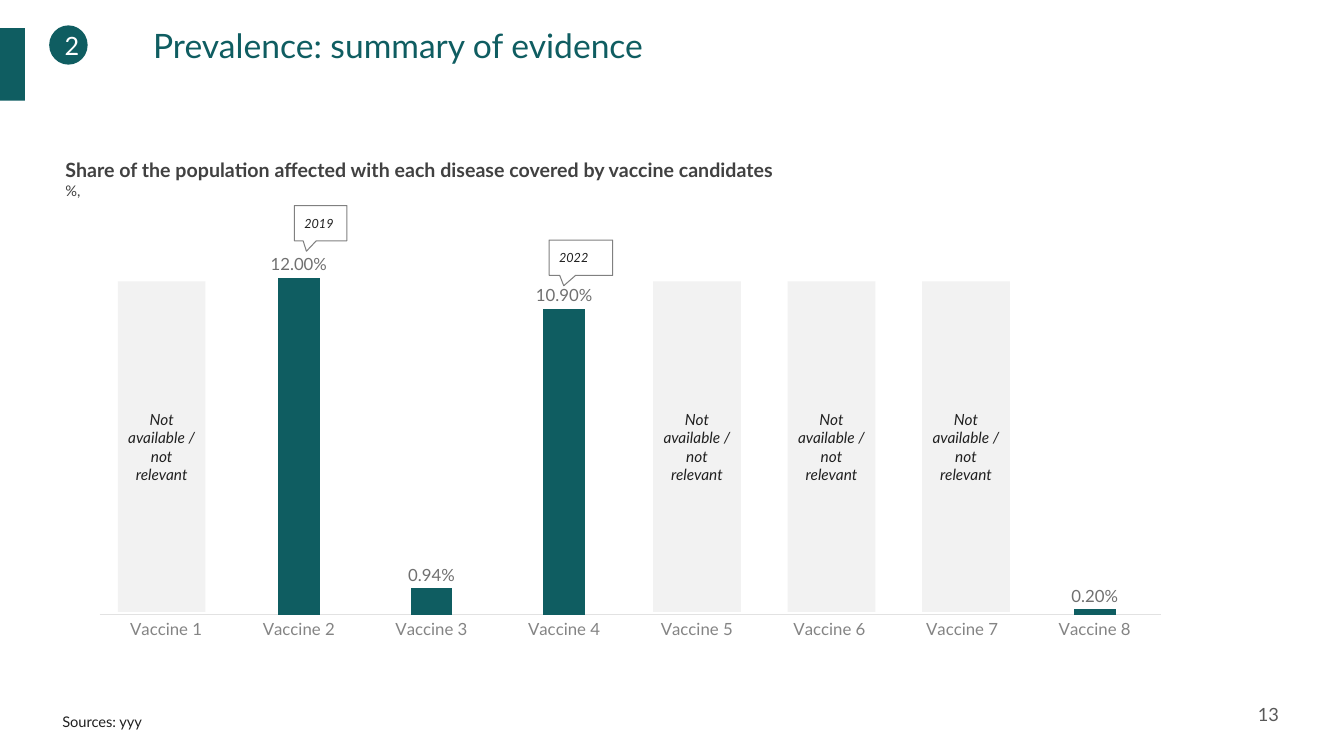
from lxml import etree
from pptx import Presentation
from pptx.chart.data import CategoryChartData
from pptx.dml.color import RGBColor
from pptx.enum.chart import XL_CHART_TYPE, XL_LABEL_POSITION, XL_TICK_MARK
from pptx.enum.shapes import MSO_SHAPE
from pptx.enum.text import MSO_ANCHOR, PP_ALIGN
from pptx.util import Cm, Pt

RECT = MSO_SHAPE.RECTANGLE
OVAL = MSO_SHAPE.OVAL
CALLOUT = MSO_SHAPE.RECTANGULAR_CALLOUT
LEFT, CENTER = PP_ALIGN.LEFT, PP_ALIGN.CENTER
TOP, MIDDLE = MSO_ANCHOR.TOP, MSO_ANCHOR.MIDDLE
COLUMNS = XL_CHART_TYPE.COLUMN_CLUSTERED
ABOVE = XL_LABEL_POSITION.OUTSIDE_END
NO_TICK = XL_TICK_MARK.NONE

TEAL = RGBColor(0x0F, 0x5D, 0x61)
WHITE = RGBColor(0xFF, 0xFF, 0xFF)
PALE = RGBColor(0xF2, 0xF2, 0xF2)
RULE = RGBColor(0xE2, 0xE2, 0xE2)
GRAY = RGBColor(0x80, 0x80, 0x80)
AXIS = RGBColor(0x84, 0x84, 0x84)
LABEL = RGBColor(0x70, 0x70, 0x70)
PAGE = RGBColor(0x59, 0x59, 0x59)
DARK = RGBColor(0x41, 0x41, 0x41)
INK = RGBColor(0x20, 0x20, 0x20)

FONT = "Lato"
SHARES = [None, 0.12, 0.0094, 0.109, None, None, None, 0.002]


def style(font, size, color, bold=False, italic=False):
    font.name = FONT
    font.size = Pt(size)
    font.color.rgb = color
    font.bold = bold
    font.italic = italic


def write(shape, text, size, color, align=LEFT, anchor=MIDDLE, italic=False):
    frame = shape.text_frame
    frame.word_wrap = True
    frame.vertical_anchor = anchor
    frame.text = text
    for para in frame.paragraphs:
        para.alignment = align
        for run in para.runs:
            style(run.font, size, color, italic=italic)
    return frame


def add_text(slide, box, text, size, color, anchor=MIDDLE):
    shape = slide.shapes.add_textbox(*map(Cm, box))
    return write(shape, text, size, color, anchor=anchor)


def add_block(slide, kind, box, fill=None):
    shape = slide.shapes.add_shape(kind, *map(Cm, box))
    shape.shadow.inherit = False
    shape.line.fill.background()
    if fill is None:
        shape.fill.background()
    else:
        shape.fill.solid()
        shape.fill.fore_color.rgb = fill
    return shape


def add_gap(slide, left):
    block = add_block(slide, RECT, (left, 7.09, 2.21, 8.33), PALE)
    write(block, "Not available / not relevant", 11, INK, CENTER, italic=True)


def add_year(slide, box, year):
    note = add_block(slide, CALLOUT, box)
    note.adjustments[0] = -0.27
    note.adjustments[1] = 0.794
    note.line.color.rgb = GRAY
    note.line.width = Pt(0.75)
    write(note, year, 9, INK, italic=True)


def place_plot(chart, x, y, w, h):
    """Fix the inner plot area, in shares of the chart frame."""
    area = chart._chartSpace.chart.plotArea
    space = area.nsmap["c"]
    for old in area.findall(f"{{{space}}}layout"):
        area.remove(old)
    layout = etree.Element(f"{{{space}}}layout")
    manual = etree.SubElement(layout, f"{{{space}}}manualLayout")
    parts = [("layoutTarget", "inner"), ("xMode", "edge"), ("yMode", "edge"),
             ("x", x), ("y", y), ("w", w), ("h", h)]
    for tag, val in parts:
        etree.SubElement(manual, f"{{{space}}}{tag}", val=str(val))
    area.insert(0, layout)


def add_bars(slide):
    data = CategoryChartData(number_format="0.00%")
    data.categories = [f"Vaccine {i}" for i in range(1, 9)]
    data.add_series("Series 1", SHARES)
    box = map(Cm, (1.96, 5.36, 27.86, 11.02))
    chart = slide.shapes.add_chart(COLUMNS, *box, data).chart
    chart.has_legend = False
    chart.has_title = False
    style(chart.font, 12, DARK)
    place_plot(chart, 0.02, 0.02, 0.96, 0.9)

    # Axes
    cat = chart.category_axis
    cat.major_tick_mark = NO_TICK
    style(cat.tick_labels.font, 12, AXIS)
    cat.format.line.color.rgb = RULE
    cat.format.line.width = Pt(0.75)
    val = chart.value_axis
    val.minimum_scale = 0
    val.maximum_scale = 0.14
    val.has_major_gridlines = False
    val.visible = False

    # Bars and their labels
    plot = chart.plots[0]
    plot.gap_width = 219
    plot.overlap = -27
    plot.vary_by_categories = False
    fill = plot.series[0].format.fill
    fill.solid()
    fill.fore_color.rgb = TEAL
    plot.has_data_labels = True
    labels = plot.data_labels
    labels.show_value = True
    labels.position = ABOVE
    labels.number_format = "0.00%"
    labels.number_format_is_linked = False
    style(labels.font, 12, LABEL)


def main():
    deck = Presentation()
    deck.slide_width = Cm(33.87)
    deck.slide_height = Cm(19.05)
    slide = deck.slides.add_slide(deck.slide_layouts[6])

    add_bars(slide)

    # Title with its side band and number
    add_block(slide, RECT, (-0.03, 0.71, 0.66, 1.83), TEAL)
    title = add_text(slide, (1.32, 0.64, 31.88, 2.03),
                     "Prevalence: summary of evidence", 24, TEAL, TOP)
    title.margin_left = Cm(2.54)
    title.margin_top = title.margin_right = title.margin_bottom = 0
    badge = add_block(slide, OVAL, (1.24, 0.64, 0.97, 0.99), TEAL)
    write(badge, "2", 18, WHITE, CENTER)

    # Chart heading
    head = add_text(
        slide, (1.4, 3.86, 19.71, 1.3),
        "Share of the population affected with each disease covered by "
        "vaccine candidates\n%,", 10.5, DARK, TOP)
    style(head.paragraphs[0].runs[0].font, 14, DARK, bold=True)

    # Vaccines without data
    add_gap(slide, 2.97)
    for i in range(3):
        add_gap(slide, 16.46 + 3.39 * i)

    # Years of the data
    add_year(slide, (7.42, 5.18, 1.32, 0.89), "2019")
    add_year(slide, (13.84, 6.05, 1.6, 0.89), "2022")

    # Footer
    add_text(slide, (1.32, 17.7, 28.27, 0.99), "Sources: yyy", 10.5, INK)
    page = add_text(slide, (31.37, 17.27, 2.03, 1.45), "13", 13, PAGE)
    page.margin_left = page.margin_right = Cm(0.33)
    page.margin_top = page.margin_bottom = Cm(0.33)

    deck.save("out.pptx")


if __name__ == "__main__":
    main()
